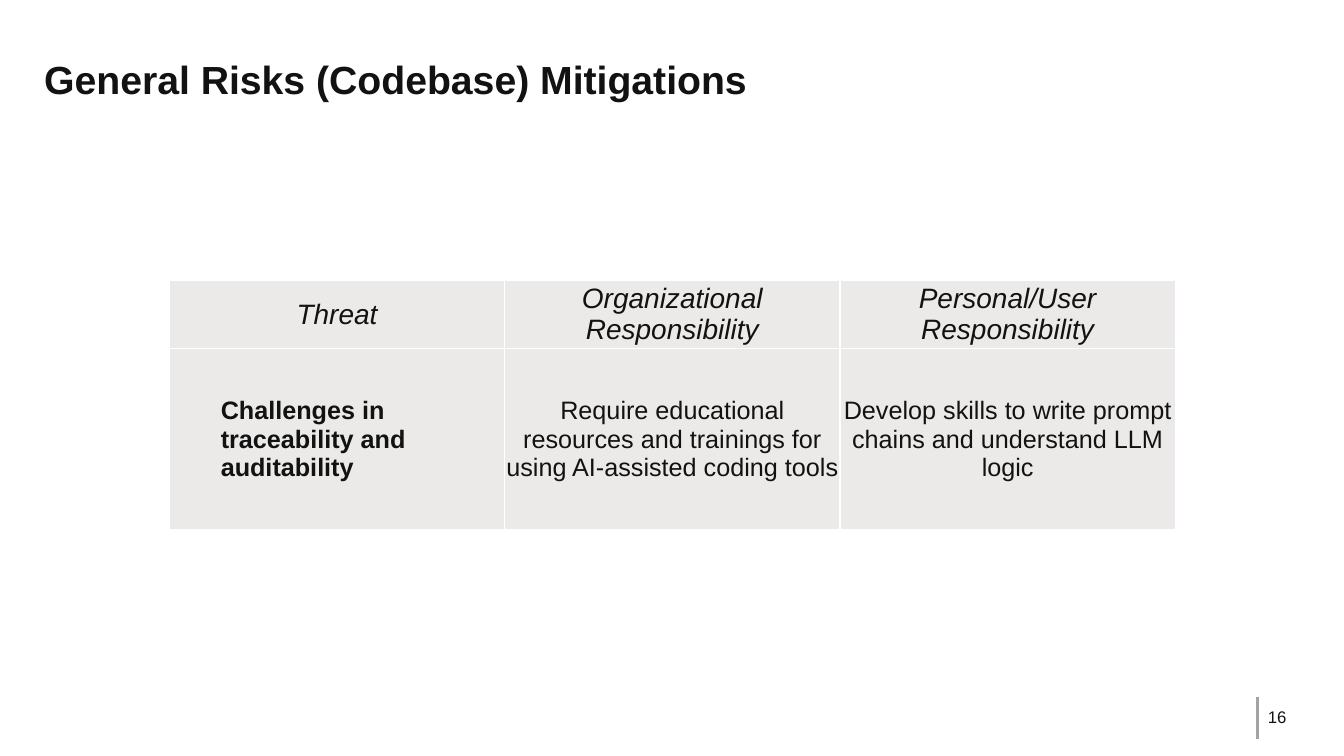
"""Build the codebase risk mitigation slide."""
import lxml.etree
import pptx
import pptx.dml.color
import pptx.enum.shapes
import pptx.enum.text
import pptx.oxml
import pptx.oxml.ns
import pptx.util

Pt = pptx.util.Pt
ALIGN = pptx.enum.text.PP_ALIGN
MIDDLE = pptx.enum.text.MSO_ANCHOR.MIDDLE
COLOURS = {"text": "121212", "cell": "EBEAE9", "border": "FFFFFF", "rule": "A3A3A3"}
HEADERS = ["Threat", "Organizational Responsibility", "Personal/User Responsibility"]
MITIGATIONS = [
    "Challenges in traceability and auditability",
    "Require educational resources and trainings for using AI-assisted coding tools",
    "Develop skills to write prompt chains and understand LLM logic",
]


def rgb(name):
    """Return the named colour."""
    return pptx.dml.color.RGBColor.from_string(COLOURS[name])


def write(tf, text, size=18, bold=False, italic=False, align=ALIGN.LEFT, indent=0):
    """Write one formatted paragraph into a text frame."""
    tf.word_wrap = True
    p = tf.paragraphs[0]
    p.alignment = align
    if indent:
        pPr = p._p.get_or_add_pPr()
        pPr.set("marL", str(Pt(indent)))
        pPr.set("indent", "0")
    r = p.add_run()
    r.text = text
    font = r.font
    font.name, font.size, font.bold, font.italic = "Arial", Pt(size), bold, italic
    font.color.rgb = rgb("text")


def add_text(s, text, left, top, width, height, **fmt):
    """Add a vertically centred text box."""
    sp = s.shapes.add_textbox(Pt(left), Pt(top), Pt(width), Pt(height))
    sp.text_frame.vertical_anchor = MIDDLE
    write(sp.text_frame, text, **fmt)


def add_rule(s, x, top, bottom):
    """Add the vertical rule beside the page number."""
    line = s.shapes.add_connector(
        pptx.enum.shapes.MSO_CONNECTOR.STRAIGHT, Pt(x), Pt(top), Pt(x), Pt(bottom))
    line.line.color.rgb = rgb("rule")
    line.line.width = Pt(2)
    lxml.etree.SubElement(line._element.spPr, pptx.oxml.ns.qn("a:effectLst"))


def style_cell(cell):
    """Give a cell its borders, fill, margins and anchor."""
    tcPr = cell._tc.get_or_add_tcPr()
    for i, side in enumerate("LRTB"):
        tcPr.insert(i, pptx.oxml.parse_xml(
            f'<a:ln{side} {pptx.oxml.ns.nsdecls("a")} w="{Pt(1)}"><a:solidFill>'
            f'<a:srgbClr val="{COLOURS["border"]}"/></a:solidFill></a:ln{side}>'))
    cell.fill.solid()
    cell.fill.fore_color.rgb = rgb("cell")
    cell.margin_left = cell.margin_right = cell.margin_top = Pt(0.7)
    cell.margin_bottom = 0
    cell.vertical_anchor = MIDDLE


def add_mitigation_table(s, left, top, col_width, row_heights):
    """Add the table of threats and responsibilities."""
    rows = [HEADERS, MITIGATIONS]
    table = s.shapes.add_table(
        len(rows), len(HEADERS), Pt(left), Pt(top),
        Pt(col_width * len(HEADERS)), Pt(sum(row_heights))).table
    for col in table.columns:
        col.width = Pt(col_width)
    for i, (texts, height) in enumerate(zip(rows, row_heights)):
        table.rows[i].height = Pt(height)
        for j, text in enumerate(texts):
            cell = table.cell(i, j)
            style_cell(cell)
            header = i == 0
            threat = not header and j == 0
            write(cell.text_frame, text, size=20 if header else 18,
                  italic=header, bold=threat, indent=36 if threat else 0,
                  align=ALIGN.LEFT if threat else ALIGN.CENTER)


def main():
    """Create and save the slide."""
    prs = pptx.Presentation()
    prs.slide_width, prs.slide_height = Pt(960), Pt(540)
    s = prs.slides.add_slide(prs.slide_layouts[6])
    add_text(s, "16", 898.5, 502.5, 37.5, 19.5, size=12)
    add_rule(s, 898.5, 498, 528)
    add_text(s, "General Risks (Codebase) Mitigations", 24.5, 24.5, 911, 64,
             size=28, bold=True)
    add_mitigation_table(s, 121, 200, 239.5, [39.5, 129.5])
    prs.save("out.pptx")


if __name__ == "__main__":
    main()
